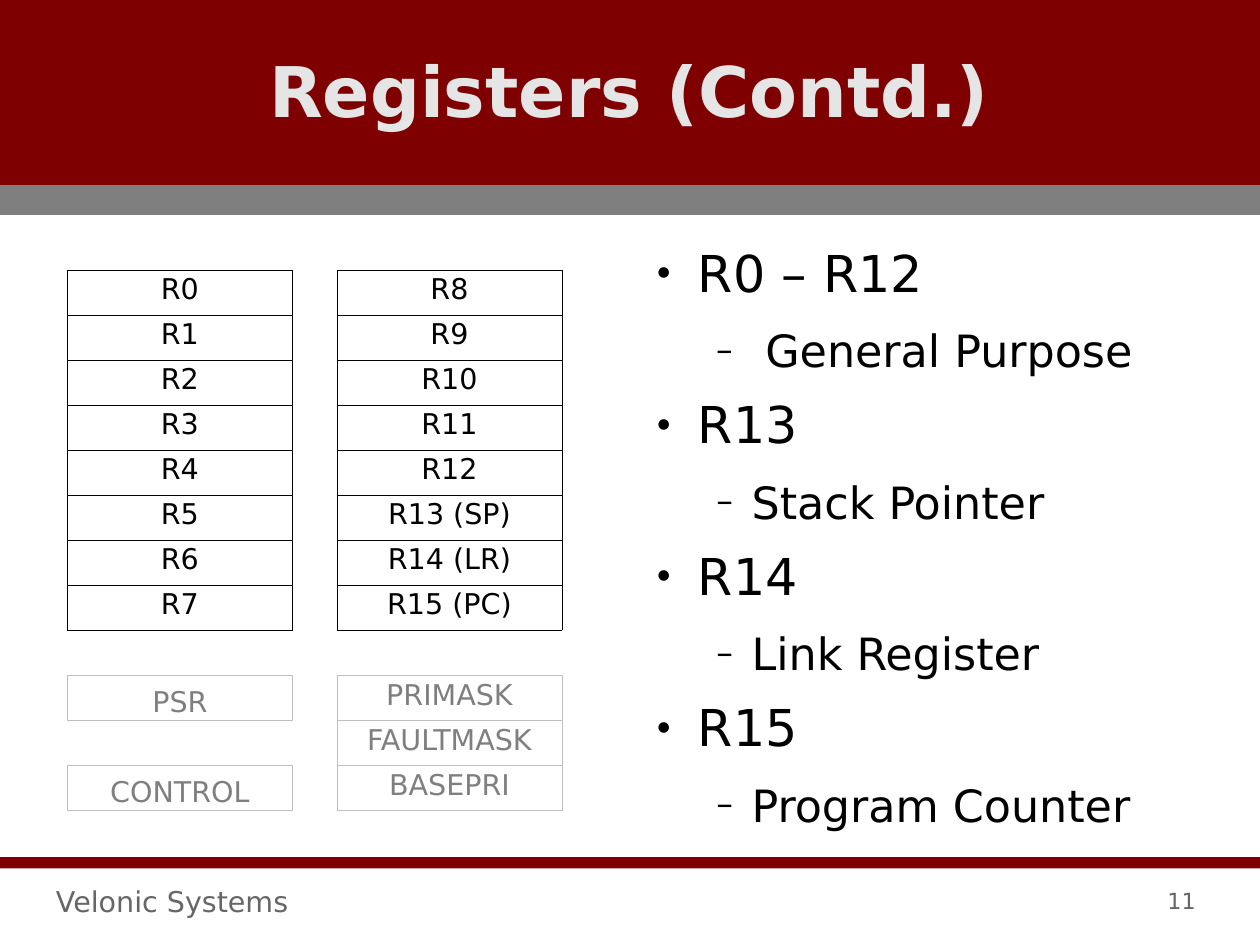
from dataclasses import dataclass

from lxml.etree import SubElement
from pptx import Presentation
from pptx.dml.color import RGBColor
from pptx.enum.shapes import MSO_SHAPE
from pptx.enum.text import PP_ALIGN
from pptx.oxml.ns import qn
from pptx.util import Inches, Pt

MAROON = RGBColor(0x7F, 0x00, 0x00)
GRAY = RGBColor(0x7F, 0x7F, 0x7F)
LIGHT_GRAY = RGBColor(0xBF, 0xBF, 0xBF)
TITLE_GRAY = RGBColor(0xE5, 0xE5, 0xE5)
FOOTER_GRAY = RGBColor(0x66, 0x66, 0x66)
BLACK = RGBColor(0x00, 0x00, 0x00)

FONT = "DejaVu Sans"
PAGE_WIDTH, PAGE_HEIGHT = 11.03, 8.26
LEFT_COLUMN, RIGHT_COLUMN, COLUMN_WIDTH = 0.59, 2.95, 1.97
ROW_HEIGHT = 3.15 / 8
CORE_TOP, SPECIAL_TOP = 2.36, 5.91
BORDER_WIDTH = Pt(0.25)


@dataclass
class Bar:
    top: float
    height: float
    color: RGBColor


@dataclass
class Label:
    text: str
    left: float
    top: float
    width: float
    height: float
    size: float
    color: RGBColor
    bold: bool = False
    align: PP_ALIGN = PP_ALIGN.LEFT


@dataclass
class RegisterBank:
    left: float
    top: float
    names: list[str]
    text_color: RGBColor
    border: RGBColor


@dataclass
class ListLevel:
    bullet: str
    bullet_font: str
    bullet_percent: int
    size: float
    line_height: float
    space_before: float
    margin: float
    hanging: float


BARS = [Bar(0, 1.62, MAROON), Bar(1.62, 0.26, GRAY), Bar(7.5, 0.1, MAROON)]

LABELS = [
    Label("Registers (Contd.)", 2.34, 0.4, 6.34, 0.76, 44, TITLE_GRAY, True, PP_ALIGN.CENTER),
    Label("Velonic Systems", 0.49, 7.73, 2.2, 0.32, 18, FOOTER_GRAY),
    Label("11", 10.22, 7.76, 0.42, 0.24, 14, FOOTER_GRAY),
]

BANKS = [
    RegisterBank(LEFT_COLUMN, CORE_TOP, [f"R{n}" for n in range(8)], BLACK, BLACK),
    RegisterBank(RIGHT_COLUMN, CORE_TOP,
                 [f"R{n}" for n in range(8, 13)] + ["R13 (SP)", "R14 (LR)", "R15 (PC)"],
                 BLACK, BLACK),
    RegisterBank(RIGHT_COLUMN, SPECIAL_TOP, ["PRIMASK", "FAULTMASK", "BASEPRI"],
                 GRAY, LIGHT_GRAY),
]

# Single registers, by row of the special bank
SINGLE_REGISTERS = {"PSR": 0, "CONTROL": 2}

REGISTER = ListLevel("●", "Calibri", 45, 32, 38, 10.75, 0.37, 0.36)
ROLE = ListLevel("–", FONT, 75, 28, 33, 13.65, 0.84, 0.31)
WIDE_ROLE = ListLevel("–", FONT, 75, 28, 33, 13.65, 0.96, 0.43)

OUTLINE = [
    ("R0 – R12", REGISTER), ("General Purpose", WIDE_ROLE),
    ("R13", REGISTER), ("Stack Pointer", ROLE),
    ("R14", REGISTER), ("Link Register", ROLE),
    ("R15", REGISTER), ("Program Counter", ROLE),
]


def style_paragraph(para, size: float, color: RGBColor, bold: bool = False,
                    align: PP_ALIGN = PP_ALIGN.LEFT) -> None:
    para.alignment = align
    para.font.name = FONT
    para.font.size = Pt(size)
    para.font.bold = bold
    para.font.color.rgb = color


def set_margins(holder, top: float) -> None:
    holder.margin_left = holder.margin_right = holder.margin_bottom = 0
    holder.margin_top = Inches(top)


def add_rectangle(page, left: float, top: float, width: float, height: float):
    box = page.shapes.add_shape(MSO_SHAPE.RECTANGLE, Inches(left), Inches(top),
                                Inches(width), Inches(height))
    box.shadow.inherit = False
    return box


def add_text_frame(page, left: float, top: float, width: float, height: float):
    box = page.shapes.add_textbox(Inches(left), Inches(top), Inches(width), Inches(height))
    box.text_frame.word_wrap = True
    set_margins(box.text_frame, 0)
    return box.text_frame


def add_bar(page, bar: Bar) -> None:
    box = add_rectangle(page, 0, bar.top, PAGE_WIDTH, bar.height)
    box.fill.solid()
    box.fill.fore_color.rgb = bar.color
    box.line.fill.background()


def add_label(page, label: Label) -> None:
    frame = add_text_frame(page, label.left, label.top, label.width, label.height)
    frame.margin_top = Inches(0.02) if label.bold else 0
    frame.text = label.text
    style_paragraph(frame.paragraphs[0], label.size, label.color, label.bold, label.align)


def set_borders(cell, color: RGBColor) -> None:
    properties = cell._tc.get_or_add_tcPr()
    for position, side in enumerate(("a:lnL", "a:lnR", "a:lnT", "a:lnB")):
        line = properties.makeelement(qn(side), {"w": str(int(BORDER_WIDTH))})
        properties.insert(position, line)
        fill = SubElement(line, qn("a:solidFill"))
        SubElement(fill, qn("a:srgbClr"), val=str(color))


def add_bank(page, bank: RegisterBank) -> None:
    count = len(bank.names)
    table = page.shapes.add_table(count, 1, Inches(bank.left), Inches(bank.top),
                                  Inches(COLUMN_WIDTH), Inches(ROW_HEIGHT * count)).table
    table.first_row = table.horz_banding = False
    for index, name in enumerate(bank.names):
        table.rows[index].height = Inches(ROW_HEIGHT)
        cell = table.cell(index, 0)
        cell.text = name
        cell.fill.background()
        set_margins(cell, 0.03)
        set_borders(cell, bank.border)
        style_paragraph(cell.text_frame.paragraphs[0], 18, bank.text_color,
                        align=PP_ALIGN.CENTER)


def add_single_register(page, name: str, row: int) -> None:
    box = add_rectangle(page, LEFT_COLUMN, SPECIAL_TOP + row * ROW_HEIGHT,
                        COLUMN_WIDTH, ROW_HEIGHT)
    box.fill.background()
    box.line.color.rgb = LIGHT_GRAY
    box.line.width = BORDER_WIDTH
    set_margins(box.text_frame, 0.05)
    box.text_frame.text = name
    style_paragraph(box.text_frame.paragraphs[0], 18, GRAY, align=PP_ALIGN.CENTER)


def add_outline(page) -> None:
    frame = add_text_frame(page, 5.74, 2.12, 4.8, 5.14)
    for index, (text, level) in enumerate(OUTLINE):
        para = frame.add_paragraph() if index else frame.paragraphs[0]
        para.text = text
        para.line_spacing = Pt(level.line_height)
        if index:
            para.space_before = Pt(level.space_before)
        properties = para._p.get_or_add_pPr()
        properties.set("marL", str(int(Inches(level.margin))))
        properties.set("indent", str(-int(Inches(level.hanging))))
        SubElement(properties, qn("a:buSzPct"), val=str(level.bullet_percent * 1000))
        SubElement(properties, qn("a:buFont"), typeface=level.bullet_font)
        SubElement(properties, qn("a:buChar"), char=level.bullet)
        style_paragraph(para, level.size, BLACK)


def main() -> None:
    deck = Presentation()
    deck.slide_width, deck.slide_height = Inches(PAGE_WIDTH), Inches(PAGE_HEIGHT)
    page = deck.slides.add_slide(deck.slide_layouts[6])

    # Bands, title and footer
    for bar in BARS:
        add_bar(page, bar)
    for label in LABELS:
        add_label(page, label)

    # Register map
    for bank in BANKS:
        add_bank(page, bank)
    for name, row in SINGLE_REGISTERS.items():
        add_single_register(page, name, row)

    # Register roles
    add_outline(page)
    deck.save("out.pptx")


if __name__ == "__main__":
    main()
